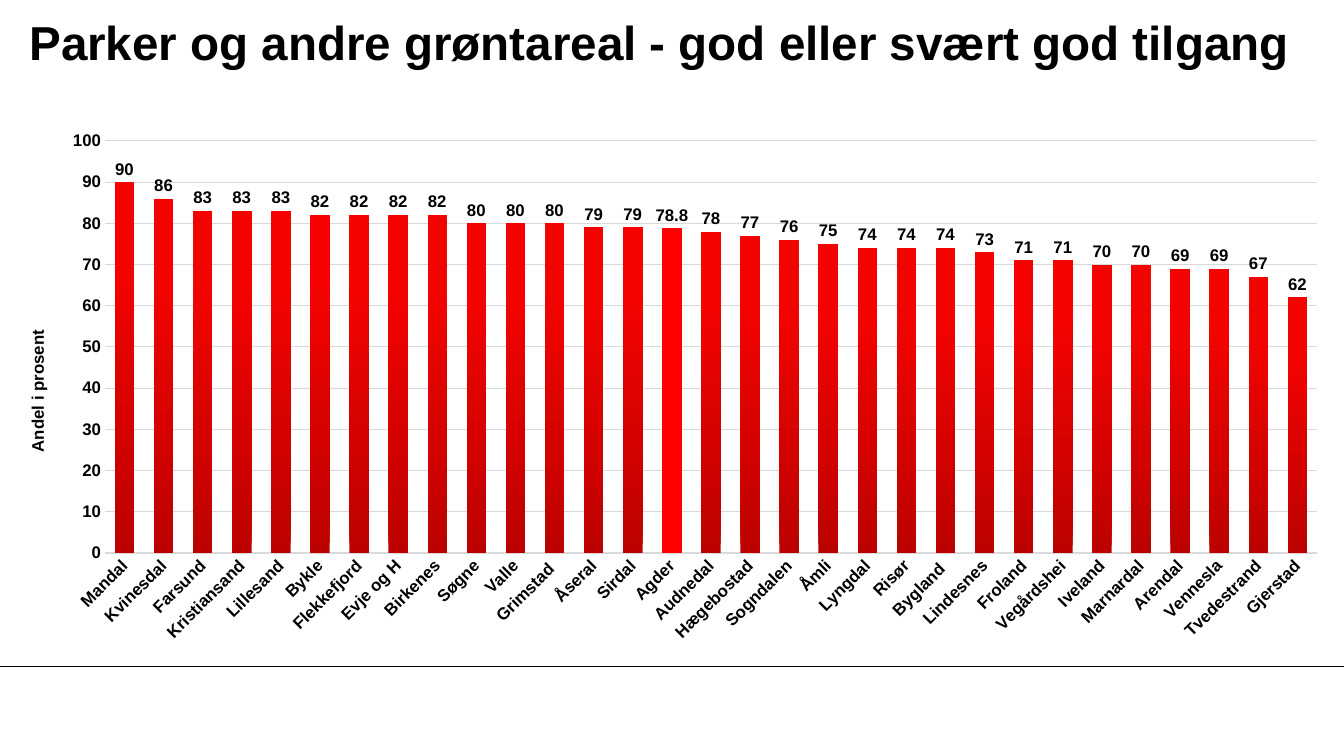
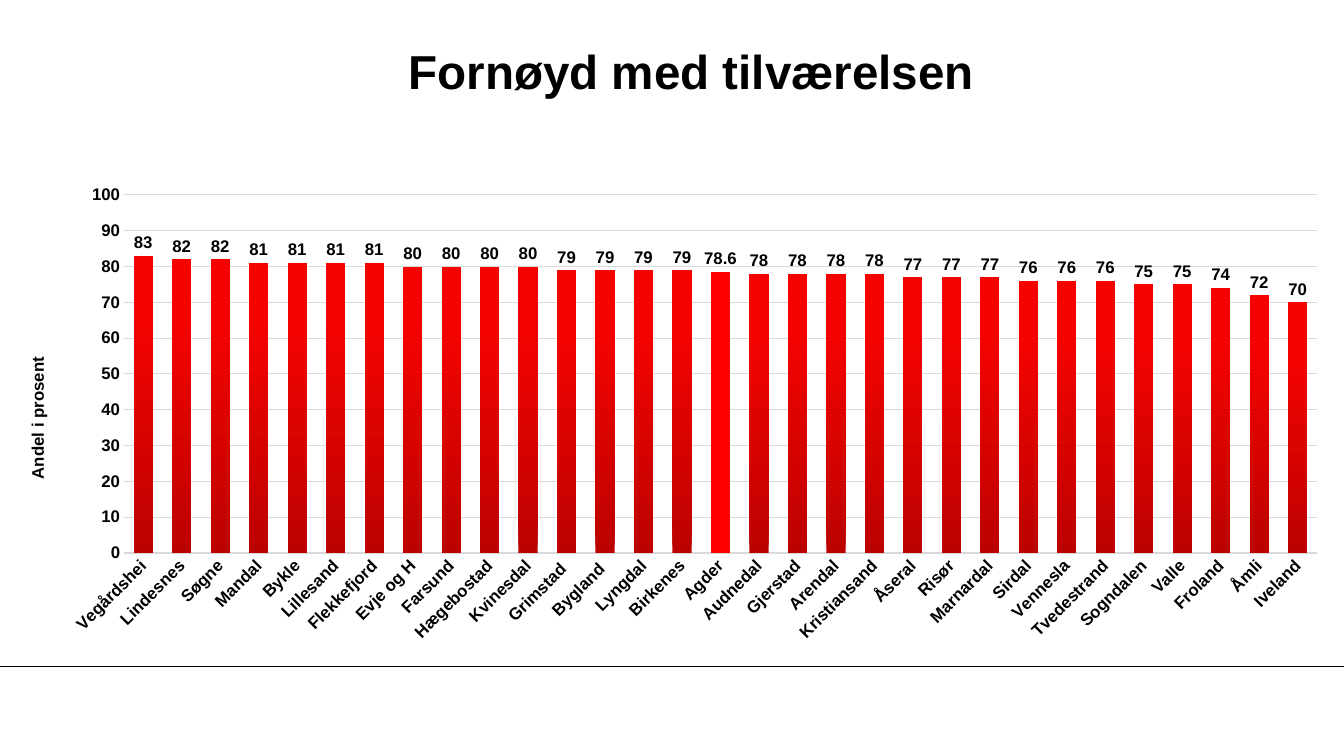
import copy

import pptx
import pptx.chart.data
import pptx.dml.color
import pptx.enum.chart
import pptx.enum.shapes
import pptx.enum.text
import pptx.oxml
import pptx.oxml.ns
import pptx.util

PX = 12192000 // 1344
SLIDE_W, SLIDE_H = 1344, 756
FONT = "Arial"
COLORS = {"text": "000000", "grid": "D9D9D9", "region": "FF0000",
          "bar_foot": "BC0200", "bar_body": "F40300", "bar_top": "F50300"}
CHART_BOX = (0, 122, 1344, 530)
REGION = "Agder"
qn = pptx.oxml.ns.qn

PARKS = [
    ("Mandal", 90), ("Kvinesdal", 86), ("Farsund", 83), ("Kristiansand", 83),
    ("Lillesand", 83), ("Bykle", 82), ("Flekkefjord", 82), ("Evje og H", 82),
    ("Birkenes", 82), ("Søgne", 80), ("Valle", 80), ("Grimstad ", 80),
    ("Åseral", 79), ("Sirdal", 79), (REGION, 78.8), ("Audnedal", 78),
    ("Hægebostad", 77), ("Sogndalen", 76), ("Åmli", 75), ("Lyngdal", 74),
    ("Risør", 74), ("Bygland ", 74), ("Lindesnes", 73), ("Froland", 71),
    ("Vegårdshei", 71), ("Iveland", 70), ("Marnardal", 70), ("Arendal", 69),
    ("Vennesla", 69), ("Tvedestrand", 67), ("Gjerstad", 62)]

SATISFIED = [
    ("Vegårdshei", 83), ("Lindesnes", 82), ("Søgne", 82), ("Mandal", 81),
    ("Bykle", 81), ("Lillesand", 81), ("Flekkefjord", 81), ("Evje og H", 80),
    ("Farsund", 80), ("Hægebostad", 80), ("Kvinesdal", 80), ("Grimstad ", 79),
    ("Bygland ", 79), ("Lyngdal", 79), ("Birkenes", 79), (REGION, 78.6),
    ("Audnedal", 78), ("Gjerstad", 78), ("Arendal", 78), ("Kristiansand", 78),
    ("Åseral", 77), ("Risør", 77), ("Marnardal", 77), ("Sirdal", 76),
    ("Vennesla", 76), ("Tvedestrand", 76), ("Sogndalen", 75), ("Valle", 75),
    ("Froland", 74), ("Åmli", 72), ("Iveland", 70)]


def emu(box):
    return [pptx.util.Emu(length * PX) for length in box]


def rgb(name):
    return pptx.dml.color.RGBColor.from_string(COLORS[name])


def style(font, size, bold=True):
    font.name = FONT
    font.size = pptx.util.Pt(size)
    font.bold = bold
    font.color.rgb = rgb("text")


def set_layout(parent, index, target=None, **fractions):
    """Pin a chart part at fractions of the chart's box."""
    old = parent.find(qn("c:layout"))
    if old is not None:
        parent.remove(old)
    values = {"xMode": "edge", "yMode": "edge", **fractions}
    if target:
        values = {"layoutTarget": target, **values}
    inner = "".join(f'<c:{tag} val="{value}"/>' for tag, value in values.items())
    parent.insert(index, pptx.oxml.parse_xml(
        f'<c:layout {pptx.oxml.ns.nsdecls("c")}>'
        f"<c:manualLayout>{inner}</c:manualLayout></c:layout>"))


def add_footer_rule(prs, slide):
    """Draw the rule once and hand it to the master."""
    y = 667 * PX
    rule = slide.shapes.add_connector(
        pptx.enum.shapes.MSO_CONNECTOR.STRAIGHT, 0, y, SLIDE_W * PX, y)
    rule.line.color.rgb = rgb("text")
    rule.line.width = pptx.util.Pt(0.75)
    rule._element.spPr.append(pptx.oxml.parse_xml(
        f'<a:effectLst {pptx.oxml.ns.nsdecls("a")}/>'))
    prs.slide_master.shapes._spTree.append(rule._element)


def add_title(slide, text, box):
    title = slide.shapes.title
    title.left, title.top, title.width, title.height = emu(box)
    frame = title.text_frame
    frame.word_wrap = True
    frame.auto_size = pptx.enum.text.MSO_AUTO_SIZE.NONE
    frame.vertical_anchor = pptx.enum.text.MSO_ANCHOR.MIDDLE
    frame.margin_left = frame.margin_right = 0
    frame.margin_top = frame.margin_bottom = 0
    paragraph = frame.paragraphs[0]
    paragraph.alignment = pptx.enum.text.PP_ALIGN.CENTER
    run = paragraph.add_run()
    run.text = text
    style(run.font, 34)


def format_bars(plot, places):
    plot.gap_width = 100
    plot.overlap = -24
    plot.vary_by_categories = False
    bars = plot.series[0]
    bars.invert_if_negative = False

    # Gradient from foot to top, plain red for the whole region
    fill = bars.format.fill
    fill.gradient()
    stops = bars._element.find(".//" + qn("a:gsLst"))
    stops.append(copy.deepcopy(stops[-1]))
    fill.gradient_angle = 90
    for stop, (position, name) in zip(
            fill.gradient_stops,
            [(0, "bar_foot"), (0.8, "bar_body"), (1, "bar_top")]):
        stop.position = position
        stop.color.rgb = rgb(name)
    region = bars.points[places.index(REGION)].format.fill
    region.solid()
    region.fore_color.rgb = rgb("region")

    labels = bars.data_labels
    labels.show_value = True
    labels.position = pptx.enum.chart.XL_LABEL_POSITION.OUTSIDE_END
    style(labels.font, 12)


def format_axes(chart):
    places, percent = chart.category_axis, chart.value_axis
    for axis in (places, percent):
        axis.major_tick_mark = axis.minor_tick_mark = pptx.enum.chart.XL_TICK_MARK.NONE
        style(axis.tick_labels.font, 12)
    places.format.line.color.rgb = rgb("grid")
    places.format.line.width = pptx.util.Pt(1)
    places._element.find(qn("c:txPr")).find(qn("a:bodyPr")).set("rot", "-2700000")

    percent.minimum_scale, percent.maximum_scale = 0, 100
    percent.major_unit = 10
    percent.format.line.fill.background()
    percent.has_major_gridlines = True
    grid = percent.major_gridlines.format.line
    grid.color.rgb = rgb("grid")
    grid.width = pptx.util.Pt(0.75)

    run = percent.axis_title.text_frame.paragraphs[0].add_run()
    run.text = "Andel i prosent"
    style(run.font, 12)
    body = percent.axis_title._element.find(".//" + qn("a:bodyPr"))
    body.set("rot", "-5400000")
    body.set("vert", "horz")


def add_bar_chart(slide, rows, box, plot_box):
    """plot_box is measured from the chart's top left corner."""
    places = [place for place, _ in rows]
    data = pptx.chart.data.CategoryChartData()
    data.categories = places
    data.add_series("Series 1", [share for _, share in rows])
    chart = slide.shapes.add_chart(
        pptx.enum.chart.XL_CHART_TYPE.COLUMN_CLUSTERED, *emu(box), data).chart
    chart.has_title = chart.has_legend = False
    style(chart.font, 10, bold=False)
    format_bars(chart.plots[0], places)
    format_axes(chart)

    # Plot area, with the axis title a little below its middle
    _, _, width, height = box
    x, y, w, h = plot_box
    set_layout(chart._chartSpace.find(".//" + qn("c:plotArea")), 0, "inner",
               x=round(x / width, 4), y=round(y / height, 4),
               w=round(w / width, 4), h=round(h / height, 4))
    set_layout(chart.value_axis.axis_title._element, 1,
               x=round(24 / width, 4), y=round((y + h / 2 - 20) / height, 4))


def add_survey_slide(prs, title, title_box, rows, plot_box):
    slide = prs.slides.add_slide(prs.slide_layouts.get_by_name("Title Only"))
    add_title(slide, title, title_box)
    add_bar_chart(slide, rows, CHART_BOX, plot_box)
    return slide


def main():
    prs = pptx.Presentation()
    prs.slide_width, prs.slide_height = emu((SLIDE_W, SLIDE_H))
    parks = add_survey_slide(
        prs, "Parker og andre grøntareal - god eller svært god tilgang",
        (17, 3, 1285, 76), PARKS, (105, 19, 1212, 412))
    add_footer_rule(prs, parks)
    add_survey_slide(prs, "Fornøyd med tilværelsen", (132, 32, 1119, 76),
                     SATISFIED, (124, 73, 1193, 358))
    prs.save("out.pptx")


if __name__ == "__main__":
    main()
